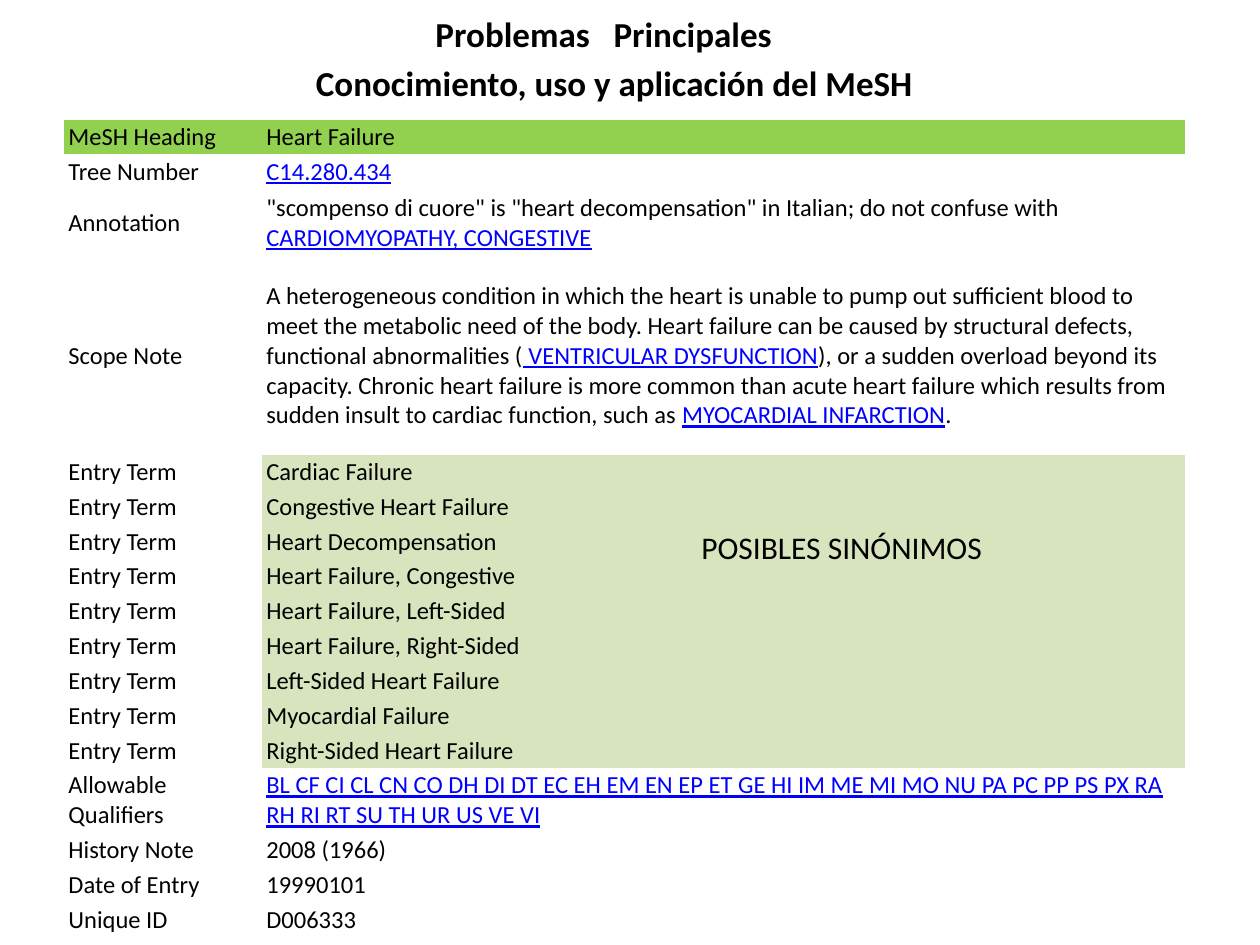
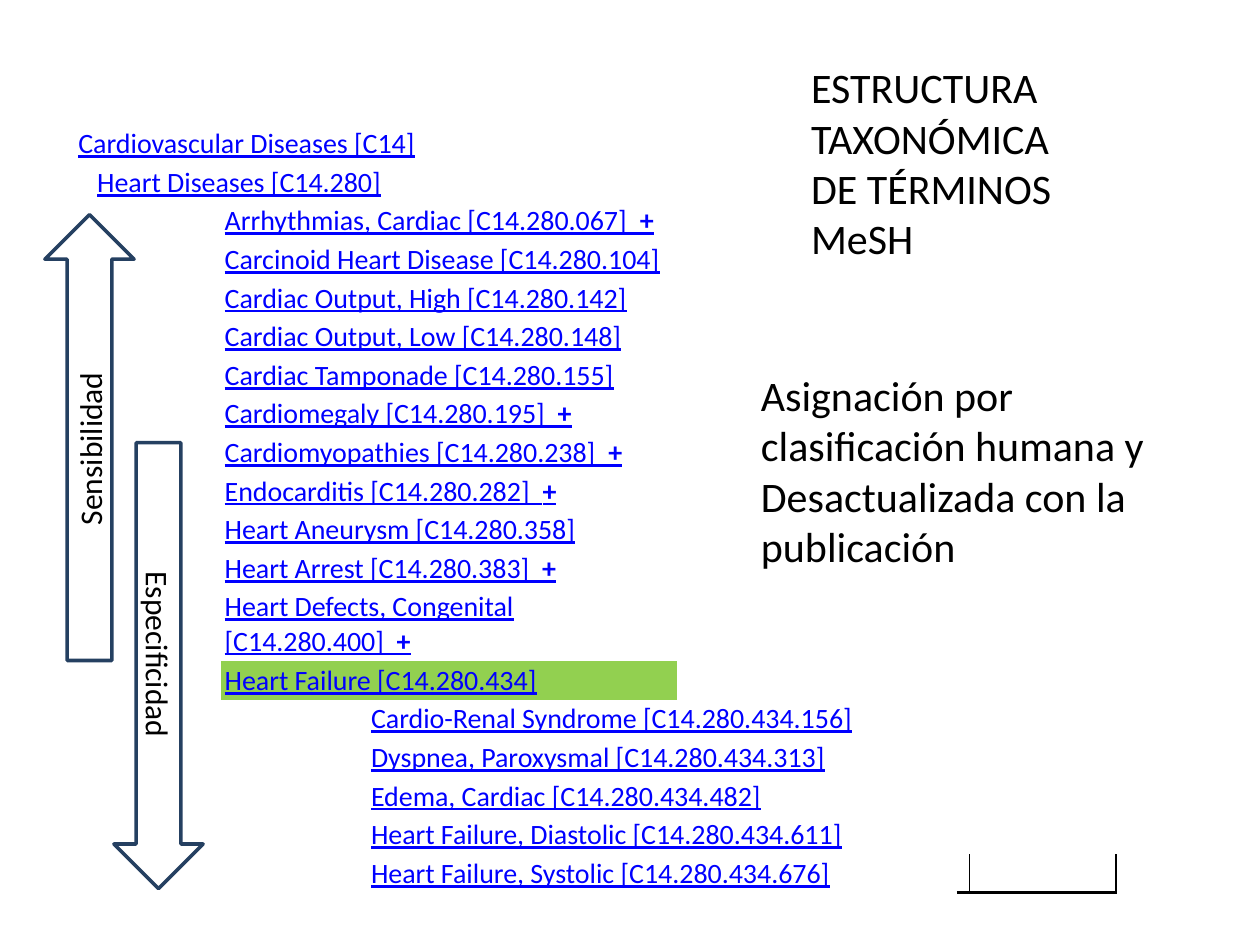
"""Build two slides on MeSH headings: a descriptor record and its taxonomy tree."""
from lxml import etree
from pptx import Presentation
from pptx import util as u
from pptx.dml.color import RGBColor
from pptx.enum import shapes, text
from pptx.oxml import ns

FONT = "Calibri"
COLORS = {"text": "000000", "link": "0000FF", "mark": "92D050",
          "synonym": "D7E4BD", "arrow": "254061"}
NO_GRID = "{2D5ABB26-0587-4C30-8999-92F81FD0307C}"

SYNONYMS = ["Cardiac Failure", "Congestive Heart Failure", "Heart Decompensation",
            "Heart Failure, Congestive", "Heart Failure, Left-Sided",
            "Heart Failure, Right-Sided", "Left-Sided Heart Failure",
            "Myocardial Failure", "Right-Sided Heart Failure"]
# Text between bars is drawn as a link.
RECORD = [
    ("MeSH Heading", "Heart Failure"),
    ("Tree Number", "|C14.280.434|"),
    ("Annotation", '"scompenso di cuore" is "heart decompensation" in Italian; '
                   "do not confuse with |CARDIOMYOPATHY, CONGESTIVE|"),
    ("Scope Note", "A heterogeneous condition in which the heart is unable to pump out "
                   "sufficient blood to meet the metabolic need of the body. Heart failure "
                   "can be caused by structural defects, functional abnormalities "
                   "(| VENTRICULAR DYSFUNCTION|), or a sudden overload beyond its capacity. "
                   "Chronic heart failure is more common than acute heart failure which "
                   "results from sudden insult to cardiac function, such as "
                   "|MYOCARDIAL INFARCTION|."),
    *[("Entry Term", name) for name in SYNONYMS],
    ("Allowable Qualifiers", "|BL CF CI CL CN CO DH DI DT EC EH EM EN EP ET GE HI IM ME MI MO "
                             "NU PA PC PP PS PX RA RH RI RT SU TH UR US VE VI|"),
    ("History Note", "2008 (1966)"),
    ("Date of Entry", "19990101"),
    ("Unique ID", "D006333"),
]
RECORD_COLS = [3.99, 18.59]
RECORD_HEIGHTS = {"Annotation": 1.37, "Scope Note": 3.98, "Allowable Qualifiers": 1.27}

TREE = [
    (0, "Cardiovascular Diseases [C14]"),
    (0, "Heart Diseases [C14.280]"),
    (1, "Arrhythmias, Cardiac [C14.280.067]  +"),
    (1, "Carcinoid Heart Disease [C14.280.104]"),
    (1, "Cardiac Output, High [C14.280.142]"),
    (1, "Cardiac Output, Low [C14.280.148]"),
    (1, "Cardiac Tamponade [C14.280.155]"),
    (1, "Cardiomegaly [C14.280.195]  +"),
    (1, "Cardiomyopathies [C14.280.238]  +"),
    (1, "Endocarditis [C14.280.282]  +"),
    (1, "Heart Aneurysm [C14.280.358]"),
    (1, "Heart Arrest [C14.280.383]  +"),
    (1, "Heart Defects, Congenital [C14.280.400]  +"),
    (1, "Heart Failure [C14.280.434]"),
    (2, "Cardio-Renal Syndrome [C14.280.434.156]"),
    (2, "Dyspnea, Paroxysmal [C14.280.434.313]"),
    (2, "Edema, Cardiac [C14.280.434.482]"),
    (2, "Heart Failure, Diastolic [C14.280.434.611]"),
    (2, "Heart Failure, Systolic [C14.280.434.676]"),
]
TREE_COLS = [2.95, 2.95, 3.3, 2.95, 5.64, 0.25, 2.95]
TREE_SPAN = 3
CORNER_BORDERS = [(5, "lnR", 0.75), (5, "lnB", 1.5), (6, "lnR", 1.5), (6, "lnB", 1.5)]

RECORD_LABELS = [
    ((8.53, 0.13, 7.57, 1.02), ["Problemas   Principales"], 20, True, False),
    ((6.12, 1.12, 12.98, 1.02), ["Conocimiento, uso y aplicación del MeSH"], 20, True, False),
    ((13.89, 10.52, 6.22, 1.02), ["POSIBLES SINÓNIMOS"], 18, False, False),
]
TREE_LABELS = [
    ((16.1, 1.12, 5.59, 4.37), ["ESTRUCTURA", "TAXONÓMICA", "DE TÉRMINOS", "MeSH"],
     24, False, True),
    ((15.09, 7.32, 9.19, 4.37), ["Asignación por clasificación humana y",
                                 "Desactualizada con la publicación"], 24, False, True),
]
ARROWS = [("Sensibilidad", -2.69, 7.92, 270), ("Especificidad", -1.3, 12.52, 90)]
ARROW_SIZE = (8.99, 1.8)


def rgb(name):
    return RGBColor.from_string(COLORS[name])


def style(r, size, color="text", bold=False):
    r.font.name, r.font.size, r.font.bold = FONT, u.Pt(size), bold
    r.font.color.rgb = rgb(color)
    r.font.underline = color == "link"


def add_run(p, words, size, color="text", bold=False):
    r = p.add_run()
    r.text = words
    style(r, size, color, bold)


def add_labels(s, labels):
    for box, lines, size, bold, wrap in labels:
        tf = s.shapes.add_textbox(*map(u.Cm, box)).text_frame
        tf.word_wrap = wrap
        tf.auto_size = text.MSO_AUTO_SIZE.SHAPE_TO_FIT_TEXT
        tf.text = "\n".join(lines)
        for p in tf.paragraphs:
            style(p.runs[0], size, bold=bold)


def add_grid(s, left, top, cols, heights, size):
    frame = s.shapes.add_table(len(heights), len(cols), u.Cm(left), u.Cm(top),
                               u.Cm(sum(cols)), u.Cm(sum(heights)))
    table = frame.table
    table.first_row = table.horz_banding = False
    table._tbl.tblPr.find(ns.qn("a:tableStyleId")).text = NO_GRID
    for col, width in zip(table.columns, cols):
        col.width = u.Cm(width)
    for row, height in zip(table.rows, heights):
        row.height = u.Cm(height)
    for cell in table.iter_cells():
        cell.margin_left = cell.margin_right = u.Cm(0.08)
        cell.margin_top = cell.margin_bottom = u.Cm(0.05)
        cell.vertical_anchor = text.MSO_ANCHOR.MIDDLE
        cell.fill.background()
        end = etree.SubElement(cell.text_frame.paragraphs[0]._p, ns.qn("a:endParaRPr"))
        end.set("sz", str(size * 100))
    return table


def fill_cell(cell, color):
    cell.fill.solid()
    cell.fill.fore_color.rgb = rgb(color)


def add_border(cell, side, width):
    ln = etree.Element(ns.qn("a:" + side), w=str(u.Pt(width)))
    fill = etree.SubElement(ln, ns.qn("a:solidFill"))
    etree.SubElement(fill, ns.qn("a:srgbClr"), val=COLORS["text"])
    props = cell._tc.get_or_add_tcPr()
    props.insert(len(props.findall(ns.qn("a:lnR"))), ln)


def build_record(s):
    heights = [RECORD_HEIGHTS.get(label, 0.68) for label, _ in RECORD]
    table = add_grid(s, 1.3, 2.41, RECORD_COLS, heights, 14)
    for i, row in enumerate(RECORD):
        for j, words in enumerate(row):
            p = table.cell(i, j).text_frame.paragraphs[0]
            for k, part in enumerate(words.split("|")):
                if part:
                    add_run(p, part, 14, "link" if k % 2 else "text")
        if row[0] == "Entry Term":
            fill_cell(table.cell(i, 1), "synonym")
    for j in range(len(RECORD_COLS)):
        fill_cell(table.cell(0, j), "mark")
    add_labels(s, RECORD_LABELS)


def build_tree(s):
    heights = [1.48 if "Congenital" in term else 0.76 for _, term in TREE]
    table = add_grid(s, 1.5, 2.51, TREE_COLS, heights, 16)
    for i, (level, term) in enumerate(TREE):
        cell = table.cell(i, level)
        cell.merge(table.cell(i, level + TREE_SPAN - 1))
        p = cell.text_frame.paragraphs[0]
        add_run(p, term.rstrip("+"), 16, "link")
        if term.endswith("+"):
            add_run(p, "+", 16, "link", True)
        if term.startswith("Heart Failure ["):
            fill_cell(cell, "mark")
    table.cell(1, 0).margin_left = u.Cm(0.46)
    for col, side, width in CORNER_BORDERS:
        add_border(table.cell(len(TREE) - 1, col), side, width)
    add_labels(s, TREE_LABELS)
    for words, left, top, angle in ARROWS:
        sp = s.shapes.add_shape(shapes.MSO_SHAPE.RIGHT_ARROW, u.Cm(left), u.Cm(top),
                                *map(u.Cm, ARROW_SIZE))
        sp.rotation = angle
        sp.shadow.inherit = False
        sp.fill.background()
        sp.line.color.rgb = rgb("arrow")
        sp.line.width = u.Pt(2)
        tf = sp.text_frame
        tf.text = words
        tf.vertical_anchor = text.MSO_ANCHOR.MIDDLE
        p = tf.paragraphs[0]
        p.alignment = text.PP_ALIGN.CENTER
        style(p.runs[0], 18)


def main():
    prs = Presentation()
    prs.slide_width, prs.slide_height = u.Cm(25.4), u.Cm(19.05)
    for build in (build_record, build_tree):
        build(prs.slides.add_slide(prs.slide_layouts[6]))
    prs.save("out.pptx")


if __name__ == "__main__":
    main()
